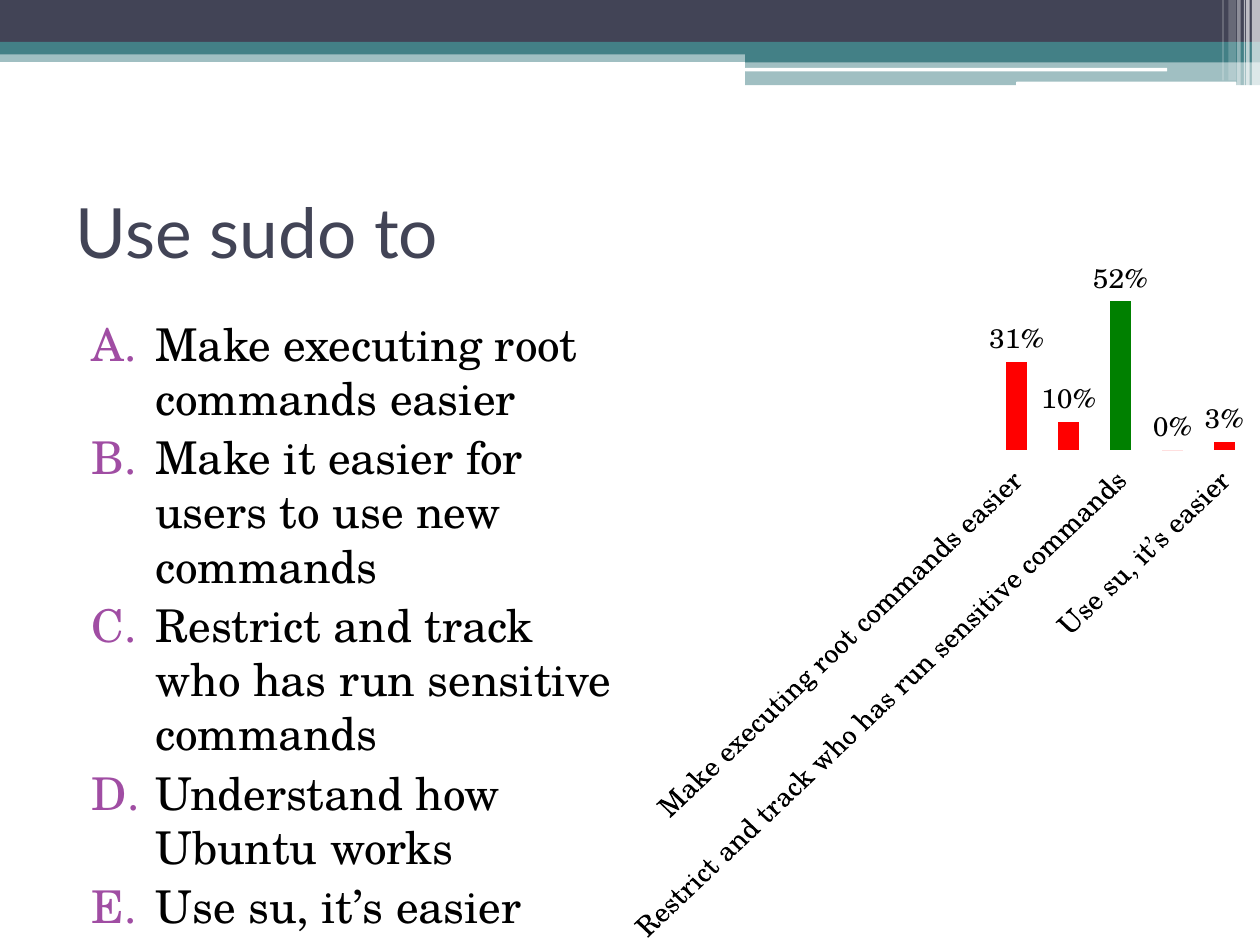
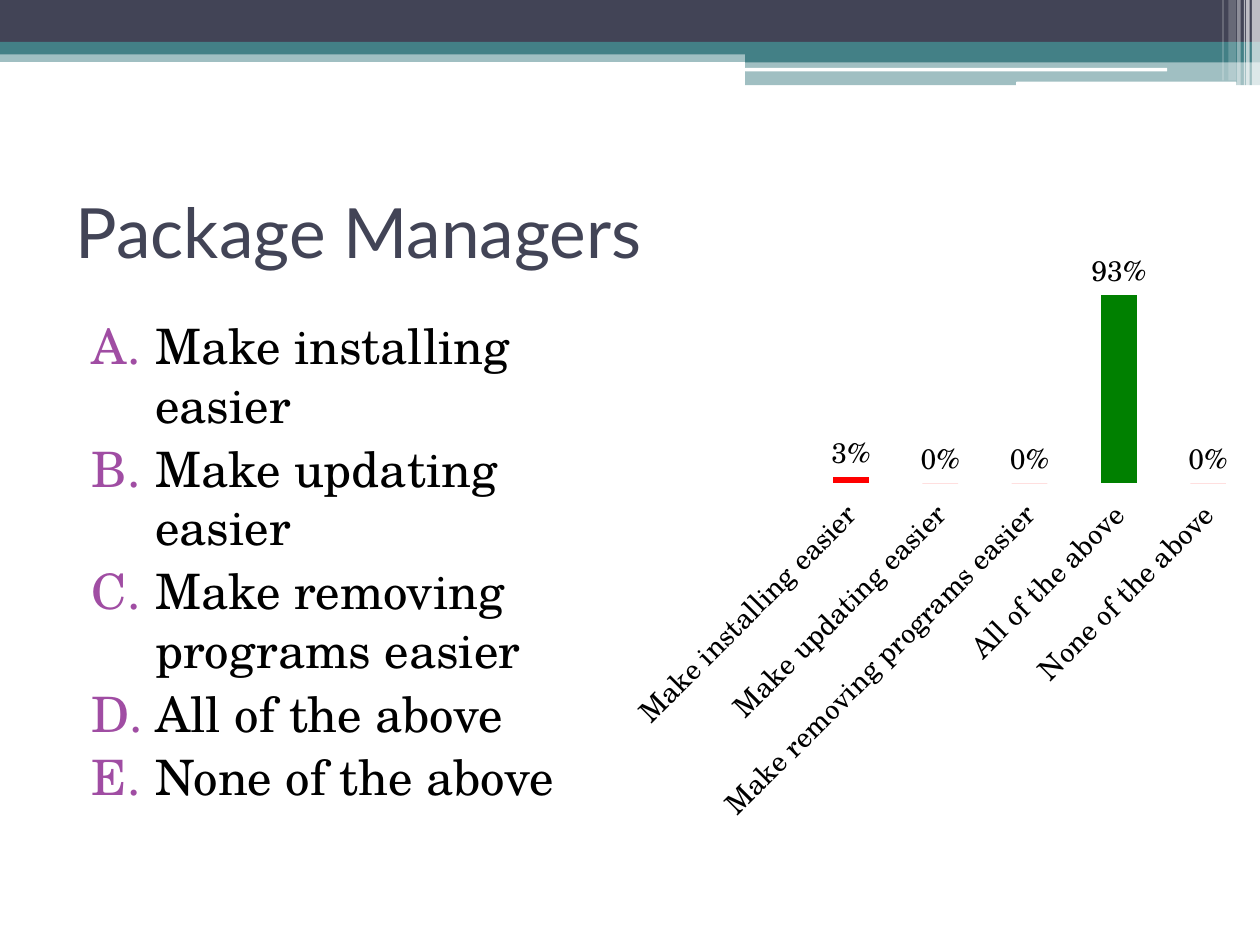
from dataclasses import dataclass

import lxml.etree
import pptx
import pptx.chart.chart
import pptx.chart.data
import pptx.dml.color
import pptx.dml.fill
import pptx.enum.chart
import pptx.enum.shapes
import pptx.enum.text
import pptx.oxml
import pptx.oxml.ns
import pptx.slide
import pptx.text.text
import pptx.util

Cm = pptx.util.Cm
Pt = pptx.util.Pt
qn = pptx.oxml.ns.qn

WIDTH, HEIGHT = 28.22, 21.17
NAVY, TEAL, WHITE, BLACK = "424456", "438086", "FFFFFF", "000000"
PURPLE, RED, GREEN = "A04DA3", "FF0000", "008000"
TITLE_FONT, BODY_FONT = "Lato", "TeX Gyre Schola"
RIGHT_LEFT = 16.69
RIGHT_WIDTH = WIDTH - RIGHT_LEFT


@dataclass(frozen=True)
class Band:
    left: float
    top: float
    width: float
    height: float
    colour: str
    opacity: int = 100
    rounded: bool = False


@dataclass(frozen=True)
class Answer:
    text: str
    share: float
    correct: bool = False


@dataclass(frozen=True)
class Question:
    title: str
    text_size: float
    answers: tuple[Answer, ...]


BANDS = (
    Band(0, 1.14, WIDTH, 0.25, TEAL, 50),
    Band(0, 0, WIDTH, 0.97, NAVY),
    Band(0, 0.94, WIDTH, 0.28, TEAL),
    Band(RIGHT_LEFT, 1.12, RIGHT_WIDTH, 0.28, TEAL),
    Band(RIGHT_LEFT, 1.35, RIGHT_WIDTH, 0.56, TEAL, 50),
    Band(RIGHT_LEFT, 1.52, 9.45, 0.08, WHITE, rounded=True),
    Band(22.76, 1.83, 4.93, 0.1, WHITE, rounded=True),
    Band(28.04, 0, 0.18, 1.93, WHITE, 65),
    Band(27.91, 0, 0.08, 1.93, WHITE, 65),
    Band(27.86, 0, 0.03, 1.93, WHITE, 60),
    Band(27.71, 0, 0.08, 1.93, WHITE, 40),
    Band(27.51, 0, 0.18, 1.8, WHITE, 20),
    Band(27.38, 0, 0.03, 1.8, WHITE, 30),
)

QUESTIONS = (
    Question("Use sudo to", 28.7, (
        Answer("Make executing root commands easier", 0.31),
        Answer("Make it easier for users to use new commands", 0.1),
        Answer("Restrict and track who has run sensitive commands", 0.52, True),
        Answer("Understand how Ubuntu works", 0),
        Answer("Use su, it’s easier", 0.03),
    )),
    Question("Package Managers", 31, (
        Answer("Make installing easier", 0.03),
        Answer("Make updating easier", 0),
        Answer("Make removing programs easier", 0),
        Answer("All of the above", 0.93, True),
        Answer("None of the above", 0),
    )),
)


def rgb(colour: str) -> pptx.dml.color.RGBColor:
    return pptx.dml.color.RGBColor.from_string(colour)


def paint(fill: pptx.dml.fill.FillFormat, colour: str) -> None:
    fill.solid()
    fill.fore_color.rgb = rgb(colour)


def style_font(font: pptx.text.text.Font, name: str, size: float, colour: str) -> None:
    font.name = name
    font.size = Pt(size)
    font.color.rgb = rgb(colour)


def draw_band(page: pptx.slide.Slide, band: Band) -> None:
    kinds = pptx.enum.shapes.MSO_SHAPE
    kind = kinds.ROUNDED_RECTANGLE if band.rounded else kinds.RECTANGLE
    shape = page.shapes.add_shape(
        kind, Cm(band.left), Cm(band.top), Cm(band.width), Cm(band.height))
    shape.shadow.inherit = False
    shape.line.fill.background()
    paint(shape.fill, band.colour)
    if band.opacity < 100:
        tone = next(shape.element.iter(qn("a:srgbClr")))
        lxml.etree.SubElement(tone, qn("a:alpha"), val=str(band.opacity * 1000))


def add_text_frame(page: pptx.slide.Slide, top: float, width: float,
                   height: float) -> pptx.text.text.TextFrame:
    box = page.shapes.add_textbox(Cm(1.42), Cm(top), Cm(width), Cm(height))
    frame = box.text_frame
    frame.word_wrap = True
    frame.margin_left = frame.margin_right = Cm(0.28)
    frame.margin_top = frame.margin_bottom = Cm(0.15)
    return frame


def draw_title(page: pptx.slide.Slide, title: str) -> None:
    frame = add_text_frame(page, 3.53, 25.4, 3.3)
    frame.vertical_anchor = pptx.enum.text.MSO_ANCHOR.MIDDLE
    frame.text = title
    style_font(frame.paragraphs[0].font, TITLE_FONT, 44, NAVY)


def letter_paragraph(paragraph: pptx.text.text._Paragraph) -> None:
    properties = paragraph._p.get_or_add_pPr()
    properties.set("marL", str(Cm(1.78)))
    properties.set("indent", str(Cm(-1.42)))
    bullet_colour = lxml.etree.SubElement(properties, qn("a:buClr"))
    lxml.etree.SubElement(bullet_colour, qn("a:srgbClr"), val=PURPLE)
    lxml.etree.SubElement(properties, qn("a:buAutoNum"), type="alphaUcPeriod")


def draw_answers(page: pptx.slide.Slide, question: Question) -> None:
    frame = add_text_frame(page, 6.93, 12.7, 13.36)
    frame.text = "\n".join(answer.text for answer in question.answers)
    for index, paragraph in enumerate(frame.paragraphs):
        letter_paragraph(paragraph)
        if index:
            paragraph.space_before = Pt(3.3)
        style_font(paragraph.font, BODY_FONT, question.text_size, BLACK)


def place_plot(chart: pptx.chart.chart.Chart) -> None:
    area = next(chart.element.iter(qn("c:plotArea")))
    for layout in area.findall(qn("c:layout")):
        area.remove(layout)
    layout = lxml.etree.Element(qn("c:layout"))
    manual = lxml.etree.SubElement(layout, qn("c:manualLayout"))
    settings = {"layoutTarget": "outer", "xMode": "edge", "yMode": "edge",
                "x": "0.01", "y": "0.064", "w": "0.99", "h": "0.765"}
    for name, value in settings.items():
        lxml.etree.SubElement(manual, qn(f"c:{name}"), val=value)
    area.insert(0, layout)


def draw_chart(page: pptx.slide.Slide, answers: tuple[Answer, ...]) -> None:
    data = pptx.chart.data.CategoryChartData(number_format="0%")
    data.categories = [answer.text for answer in answers]
    data.add_series("Series 1", [answer.share for answer in answers])
    chart = page.shapes.add_chart(
        pptx.enum.chart.XL_CHART_TYPE.COLUMN_CLUSTERED,
        Cm(13.94), Cm(5.28), Cm(14.12), Cm(15.88), data).chart
    chart.has_legend = False
    chart.has_title = False
    style_font(chart.font, BODY_FONT, 18, BLACK)
    place_plot(chart)

    for axis in (chart.category_axis, chart.value_axis):
        axis.has_major_gridlines = False
        axis.format.line.fill.background()
    chart.value_axis.minimum_scale = 0
    chart.value_axis.tick_label_position = pptx.enum.chart.XL_TICK_LABEL_POSITION.NONE
    style_font(chart.category_axis.tick_labels.font, BODY_FONT, 18, BLACK)
    label_body = next(chart.category_axis._element.iter(qn("a:bodyPr")))
    label_body.set("rot", "-2700000")

    plot = chart.plots[0]
    plot.gap_width = 150
    plot.vary_by_categories = False
    plot.has_data_labels = True
    labels = plot.data_labels
    labels.show_value = True
    labels.number_format = "0%"
    labels.number_format_is_linked = False
    labels.position = pptx.enum.chart.XL_LABEL_POSITION.OUTSIDE_END

    series = plot.series[0]
    series.invert_if_negative = False
    for index, answer in enumerate(answers):
        paint(series.points[index].format.fill, GREEN if answer.correct else RED)


def main() -> None:
    deck = pptx.Presentation()
    deck.slide_width, deck.slide_height = Cm(WIDTH), Cm(HEIGHT)
    for question in QUESTIONS:
        page = deck.slides.add_slide(deck.slide_layouts[6])
        paint(page.background.fill, WHITE)
        for band in BANDS:
            draw_band(page, band)
        draw_chart(page, question.answers)
        draw_title(page, question.title)
        draw_answers(page, question)
    deck.save("out.pptx")


if __name__ == "__main__":
    main()
